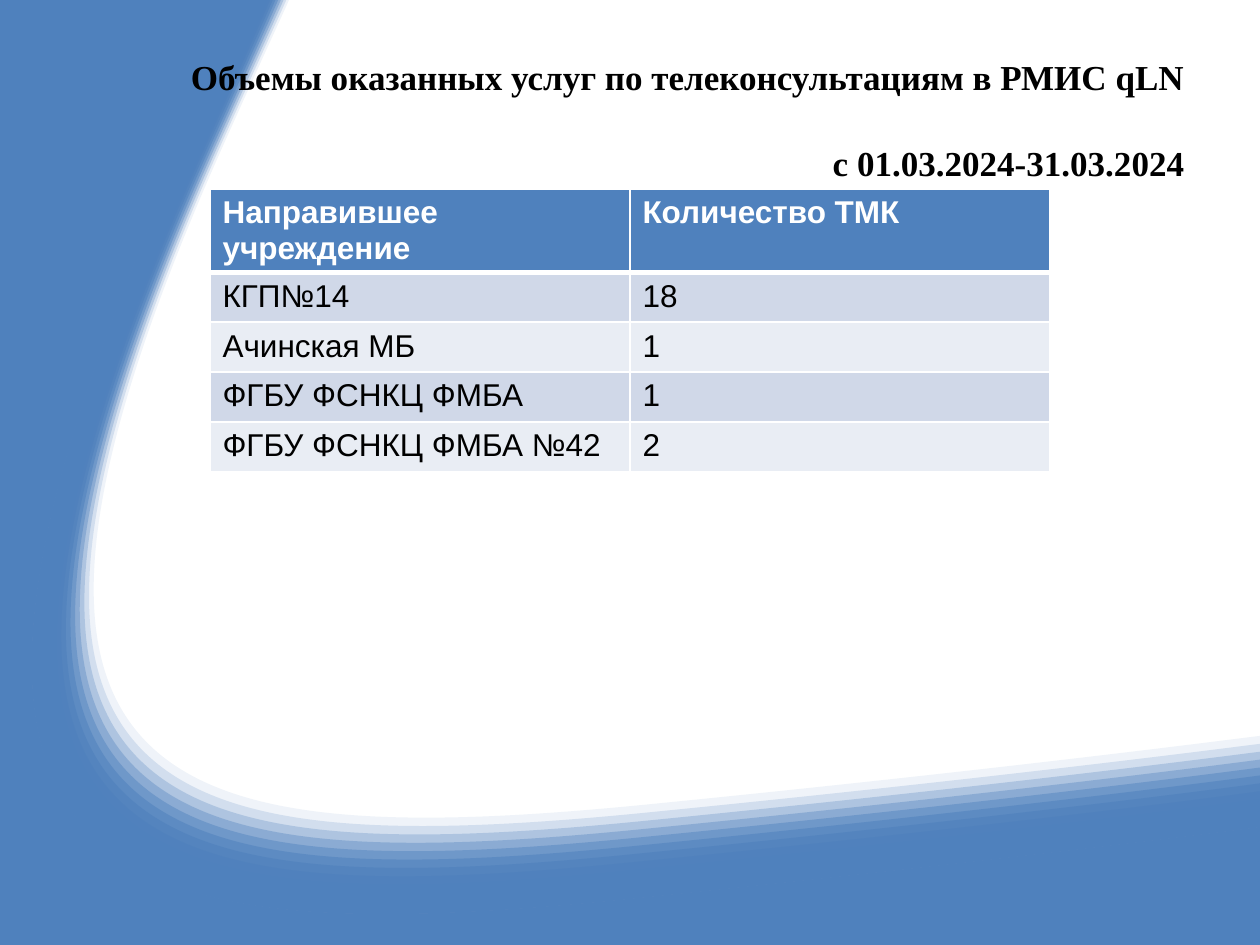
from dataclasses import dataclass

from lxml.etree import SubElement
from pptx import Presentation
from pptx.dml.color import RGBColor as Rgb
from pptx.enum.text import MSO_ANCHOR as Anchor, PP_ALIGN as Align
from pptx.oxml.ns import qn
from pptx.util import Emu, Pt

EMU_PER_PX = 914400 / 126
WIDTH, HEIGHT = 1260, 945


@dataclass(frozen=True)
class Theme:
    blue: Rgb = Rgb.from_string("4F81BD")
    white: Rgb = Rgb.from_string("FFFFFF")
    black: Rgb = Rgb.from_string("000000")
    row_tints: tuple = (Rgb.from_string("D0D8E8"), Rgb.from_string("E9EDF4"))
    title_font: str = "Times New Roman"
    table_font: str = "Arial"
    title_size: int = 20
    table_size: int = 18


THEME = Theme()

# Each edge: a start point, then three Bezier segments of three points.
BASE_EDGE = [(1260, 827), (1260, 827), (1016, 859), (619, 900), (101, 951),
             (-152, 897), (185, 145), (227, 52), (251, 0), (251, 0)]
FIRST_BAND_EDGE = [(1260, 736), (1257, 736), (1026, 767), (653, 804), (152, 854),
                   (-69, 796), (227, 137), (266, 50), (289, 1), (289, 0)]
LAST_BAND_EDGE = [(1260, 815), (1227, 820), (990, 851), (627, 887), (116, 939),
                  (-135, 886), (199, 144), (234, 66), (256, 14), (262, 0)]
BAND_COUNT = 11

TITLE_LINES = ["Объемы оказанных услуг по телеконсультациям в РМИС qLN",
               "с 01.03.2024-31.03.2024"]
HEADER = ("Направившее учреждение", "Количество ТМК")
CONSULTATIONS = [("КГП№14", "18"), ("Ачинская МБ", "1"),
                 ("ФГБУ ФСНКЦ ФМБА", "1"), ("ФГБУ ФСНКЦ ФМБА №42", "2")]


def px(length):
    return Emu(round(length * EMU_PER_PX))


def blend(first, last, share):
    return [tuple(a + (b - a) * share for a, b in zip(p, q))
            for p, q in zip(first, last)]


def line_steps(points):
    return [("lnTo", [point]) for point in points]


def curve_steps(edge):
    return [("cubicBezTo", edge[i:i + 3]) for i in range(1, len(edge), 3)]


def add_area(slide, steps, opacity=1):
    """Add a slide-sized freeform whose outline follows the drawing steps."""
    builder = slide.shapes.build_freeform(0, 0, scale=1.0)
    builder.add_line_segments([(px(WIDTH), 0), (px(WIDTH), px(HEIGHT)), (0, px(HEIGHT))])
    area = builder.convert_to_shape()
    outline = area.element.find(".//" + qn("a:path"))
    for child in list(outline):
        outline.remove(child)
    for kind, points in steps:
        step = SubElement(outline, qn(f"a:{kind}"))
        for x, y in points:
            SubElement(step, qn("a:pt"), x=str(px(x)), y=str(px(y)))
    SubElement(outline, qn("a:close"))

    area.shadow.inherit = False
    area.fill.solid()
    area.fill.fore_color.rgb = THEME.blue
    area.line.fill.background()
    if opacity < 1:
        color = area.element.spPr.find(qn("a:solidFill")).find(qn("a:srgbClr"))
        SubElement(color, qn("a:alpha"), val=str(round(opacity * 100) * 1000))


def add_swoosh(slide):
    corners = [(0, 0), (0, HEIGHT), (WIDTH, HEIGHT)]
    add_area(slide, [("moveTo", BASE_EDGE[:1]), *curve_steps(BASE_EDGE),
                     *line_steps(corners)])
    way_back = BASE_EDGE[::-1]
    for band in range(BAND_COUNT):
        edge = blend(FIRST_BAND_EDGE, LAST_BAND_EDGE, band / (BAND_COUNT - 1))
        steps = [("moveTo", edge[:1]), *curve_steps(edge),
                 *line_steps(way_back[:1]), *curve_steps(way_back)]
        add_area(slide, steps, (band + 1) / BAND_COUNT)


def add_run(paragraph, text, font, size, color, bold):
    run = paragraph.add_run()
    run.text = text
    run.font.name = font
    run.font.size = Pt(size)
    run.font.color.rgb = color
    run.font.bold = bold


def fill_title(slide):
    title = slide.shapes.title
    title.left, title.top, title.width, title.height = px(164), px(41), px(1033), px(157)
    frame = title.text_frame
    frame.word_wrap = True
    frame.vertical_anchor = Anchor.MIDDLE
    for index, line in enumerate(TITLE_LINES):
        paragraph = frame.add_paragraph() if index else frame.paragraphs[0]
        paragraph.alignment = Align.RIGHT
        paragraph.space_before = Pt(25 if index else 0)
        add_run(paragraph, line, THEME.title_font, THEME.title_size, THEME.black, True)
    # Bring the title in front of the background areas.
    title.element.getparent().append(title.element)


def set_borders(cell, top, bottom):
    properties = cell._tc.get_or_add_tcPr()
    for side, width in (("L", 1), ("R", 1), ("T", top), ("B", bottom)):
        line = SubElement(properties, qn(f"a:ln{side}"), w=str(Pt(width)))
        fill = SubElement(line, qn("a:solidFill"))
        SubElement(fill, qn("a:srgbClr"), val=str(THEME.white))


def add_consultation_table(slide):
    rows = [HEADER, *CONSULTATIONS]
    heights = [82] + [50] * len(CONSULTATIONS)
    table = slide.shapes.add_table(len(rows), len(HEADER), px(210), px(189),
                                   px(840), px(sum(heights))).table
    for column in table.columns:
        column.width = px(420)
    for index, (values, height) in enumerate(zip(rows, heights)):
        is_header = index == 0
        table.rows[index].height = px(height)
        for cell, value in zip(table.rows[index].cells, values):
            set_borders(cell, 3 if index == 1 else 1, 3 if is_header else 1)
            cell.fill.solid()
            cell.fill.fore_color.rgb = (THEME.blue if is_header
                                        else THEME.row_tints[(index - 1) % 2])
            add_run(cell.text_frame.paragraphs[0], value, THEME.table_font,
                    THEME.table_size, THEME.white if is_header else THEME.black,
                    is_header)


def main():
    deck = Presentation()
    deck.slide_width, deck.slide_height = px(WIDTH), px(HEIGHT)
    slide = deck.slides.add_slide(deck.slide_layouts[5])
    add_swoosh(slide)
    fill_title(slide)
    add_consultation_table(slide)
    deck.save("out.pptx")


if __name__ == "__main__":
    main()
